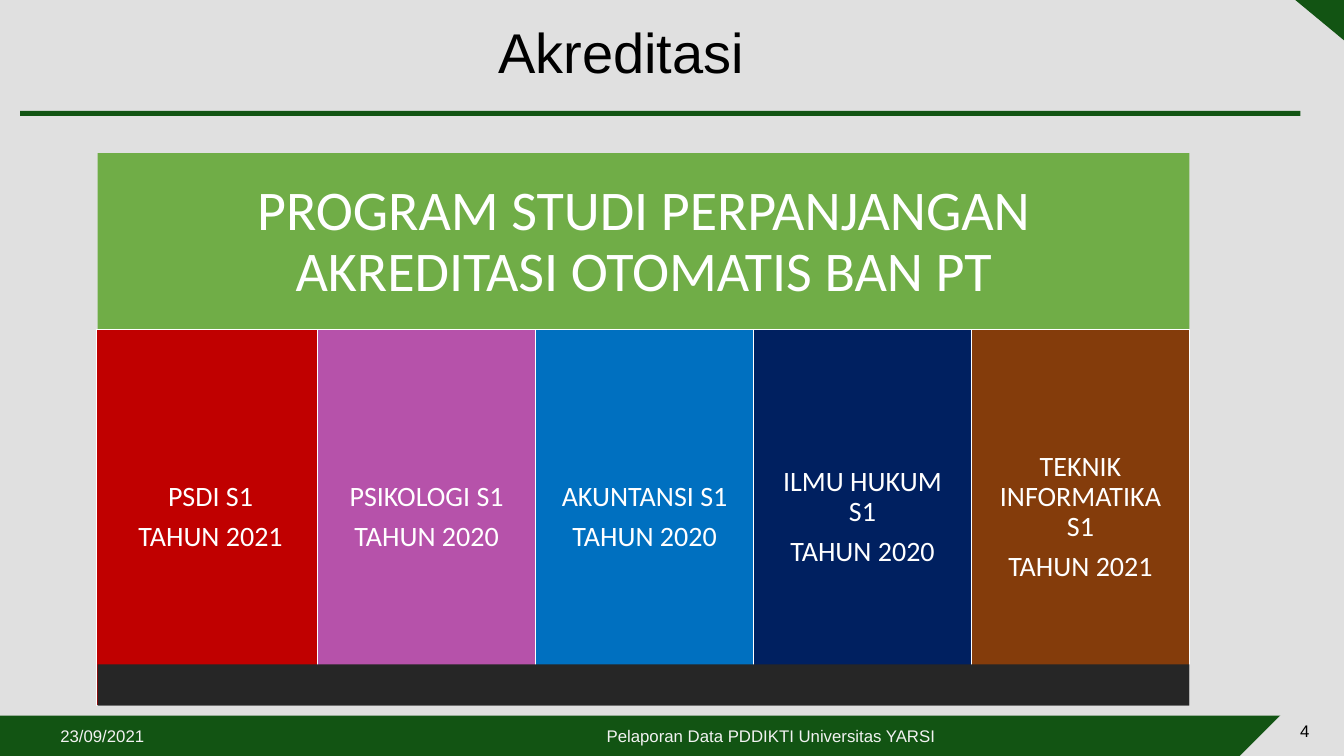
"""Build the accreditation slide: a heading over five coloured study programme panels."""
from dataclasses import dataclass

from pptx import Presentation
from pptx.dml.color import RGBColor
from pptx.enum.shapes import MSO_SHAPE as Preset
from pptx.enum.text import MSO_ANCHOR as Anchor, PP_ALIGN as Align
from pptx.util import Inches, Pt

CELL = 0.1
COLUMNS, ROWS = 133.33, 75
GREEN, GREY, WHITE, PALE, BLACK = "125413", "E0E0E0", "FFFFFF", "F2F2F2", "000000"
CHART_LEFT, CHART_RIGHT, CHART_WIDTH = 9.7, 118, 108.3
PANEL_TOP, PANEL_HEIGHT, PANEL_PITCH = 32.7, 37.3, 21.62


@dataclass(frozen=True)
class Area:
    left: float
    top: float
    width: float
    height: float


@dataclass(frozen=True)
class Block:
    area: Area
    fill: str
    preset: Preset = Preset.RECTANGLE
    rotation: int = 0
    line: str | None = None


@dataclass(frozen=True)
class Words:
    lines: tuple[str, ...]
    size: int
    font: str = "Arial"
    colour: str = WHITE
    align: Align = Align.CENTER
    spacing: float = 1.0
    after: float = 0
    inset: float | None = None


@dataclass(frozen=True)
class Programme:
    name: str
    year: str
    fill: str
    inset: float


FRAME = (
    Block(Area(0, 71, COLUMNS, 4), GREEN),
    Block(Area(128, 70, COLUMNS - 128, 5), GREY),
    Block(Area(123, 70, 5, 5), GREY, Preset.RIGHT_TRIANGLE, 270),
    Block(Area(COLUMNS - 4.83, 0, 4.83, 4), GREEN, Preset.RIGHT_TRIANGLE, 180),
    Block(Area(2, 11, 127, 0.5), GREEN),
)
LABELS = (
    (Area(36, 1, 51.2, 9), Words(("Akreditasi",), 40, colour=BLACK, spacing=0.9)),
    (Area(5, 72, 25, 2), Words(("23/09/2021",), 12, colour=PALE, align=Align.LEFT)),
    (Area(35, 72, 83, 2), Words(("Pelaporan Data PDDIKTI Universitas YARSI",), 12, colour=PALE)),
    (Area(128, 70, COLUMNS - 128, 5), Words(("4",), 12, colour=BLACK, align=Align.LEFT)),
)
HEADING = "PROGRAM STUDI PERPANJANGAN AKREDITASI OTOMATIS BAN PT"
PROGRAMMES = (
    Programme("PSDI S1", "TAHUN 2021", "C00000", 2.6),
    Programme("PSIKOLOGI S1", "TAHUN 2020", "B652AA", 2.5),
    Programme("AKUNTANSI S1", "TAHUN 2020", "0070C0", 2.5),
    Programme("ILMU HUKUM S1", "TAHUN 2020", "002060", 2.7),
    Programme("TEKNIK INFORMATIKA S1", "TAHUN 2021", "843C0B", 2.7),
)


def colour(value: str) -> RGBColor:
    return RGBColor.from_string(value)


def cells(count: float) -> int:
    return Inches(count * CELL)


def bounds(area: Area) -> tuple[int, ...]:
    return tuple(cells(n) for n in (area.left, area.top, area.width, area.height))


def write(box, words: Words) -> None:
    frame = box.text_frame
    frame.word_wrap = True
    frame.vertical_anchor = Anchor.MIDDLE
    if words.inset is not None:
        frame.margin_left = frame.margin_right = cells(words.inset)
        frame.margin_top = frame.margin_bottom = cells(words.inset)
    frame.text = "\n".join(words.lines)
    for para in frame.paragraphs:
        para.alignment = words.align
        para.line_spacing = words.spacing
        para.space_after = Pt(words.after)
        for span in para.runs:
            span.font.name = words.font
            span.font.size = Pt(words.size)
            span.font.color.rgb = colour(words.colour)


def draw_block(page, block: Block, words: Words | None = None) -> None:
    shape = page.shapes.add_shape(block.preset, *bounds(block.area))
    shape.shadow.inherit = False
    shape.rotation = block.rotation
    shape.fill.solid()
    shape.fill.fore_color.rgb = colour(block.fill)
    if block.line:
        shape.line.color.rgb = colour(block.line)
        shape.line.width = Pt(1)
    else:
        shape.line.fill.background()
    if words:
        write(shape, words)


def draw_label(page, area: Area, words: Words) -> None:
    write(page.shapes.add_textbox(*bounds(area)), words)


def chart_words(lines: tuple[str, ...], size: int, inset: float) -> Words:
    return Words(lines, size, "Calibri", spacing=0.9, after=size * 0.35, inset=inset)


def panel_area(index: int) -> Area:
    if index == 0:
        return Area(9.6, PANEL_TOP, 22.6, PANEL_HEIGHT)
    left = CHART_RIGHT - (len(PROGRAMMES) - index) * PANEL_PITCH
    return Area(left, PANEL_TOP, PANEL_PITCH, PANEL_HEIGHT)


def main() -> None:
    deck = Presentation()
    deck.slide_width, deck.slide_height = cells(COLUMNS), cells(ROWS)
    page = deck.slides.add_slide(deck.slide_layouts[6])
    page.background.fill.solid()
    page.background.fill.fore_color.rgb = colour(GREY)
    for block in FRAME:
        draw_block(page, block)
    for area, words in LABELS:
        draw_label(page, area, words)
    heading_area = Area(CHART_LEFT, 15.2, CHART_WIDTH, 17.8)
    draw_block(page, Block(heading_area, "70AD47"), chart_words((HEADING,), 40, 2.7))
    for index, programme in enumerate(PROGRAMMES):
        block = Block(panel_area(index), programme.fill, line=WHITE)
        lines = (programme.name, programme.year)
        draw_block(page, block, chart_words(lines, 20, programme.inset))
    draw_block(page, Block(Area(CHART_LEFT, 65.9, CHART_WIDTH, 4.1), "262626"))
    deck.save("out.pptx")


if __name__ == "__main__":
    main()
